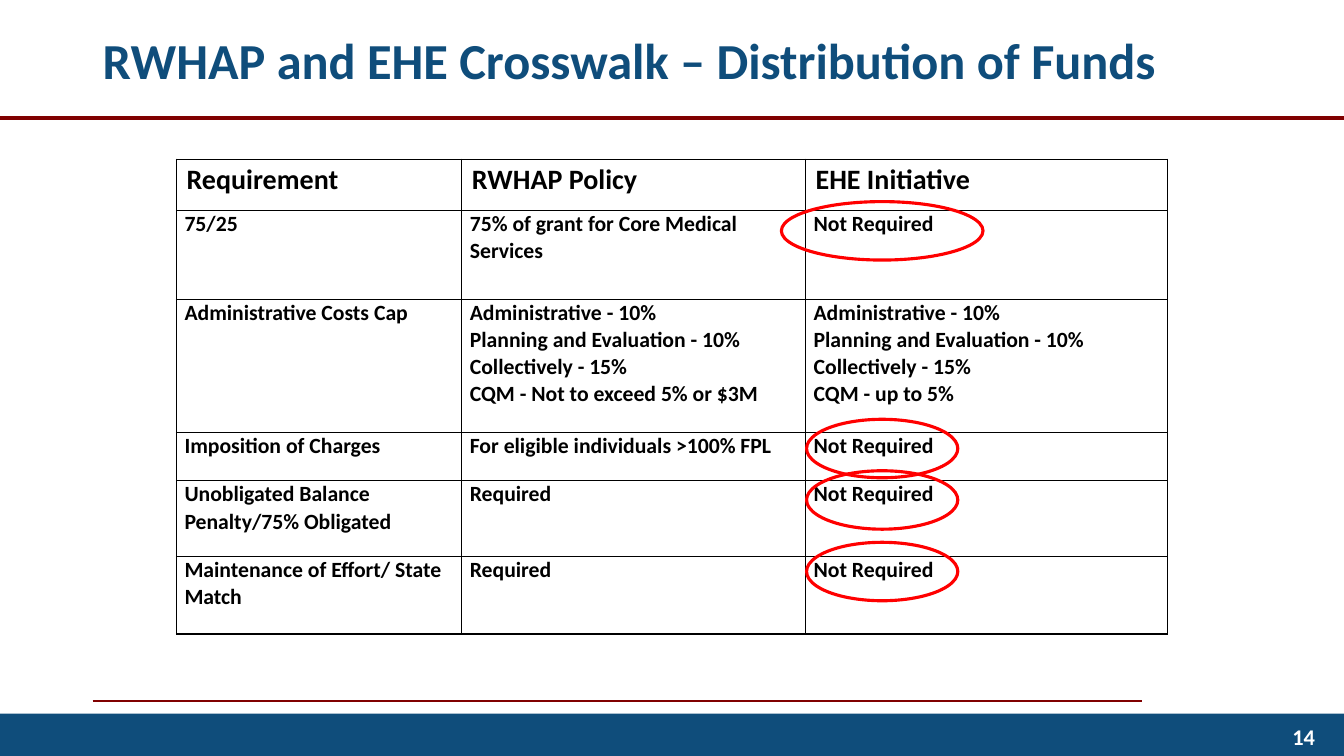
from lxml.etree import SubElement
from pptx import Presentation
from pptx.dml.color import RGBColor
from pptx.enum.shapes import MSO_CONNECTOR, MSO_SHAPE
from pptx.enum.text import MSO_ANCHOR, PP_ALIGN
from pptx.oxml.ns import qn
from pptx.util import Inches, Pt

SLIDE_WIDTH, SLIDE_HEIGHT = 13.33, 7.5
NAVY, MAROON, RED, BLACK, WHITE = "0F4D7B", "800000", "FF0000", "000000", "FFFFFF"

COLUMN_WIDTHS = [2.83, 3.41, 3.59]
ROW_HEIGHTS = [0.51, 0.88, 1.32, 0.48, 0.75, 0.77]
REQUIREMENTS = [
    ("Requirement", "RWHAP Policy", "EHE Initiative"),
    ("75/25", "75% of grant for Core Medical Services", "Not Required"),
    (
        "Administrative Costs Cap",
        "Administrative - 10%\nPlanning and Evaluation - 10%\n"
        "Collectively - 15%\nCQM - Not to exceed 5% or $3M",
        "Administrative - 10%\nPlanning and Evaluation - 10%\n"
        "Collectively - 15%\nCQM - up to 5%",
    ),
    ("Imposition of Charges", "For eligible individuals >100% FPL", "Not Required"),
    ("Unobligated Balance Penalty/75% Obligated", "Required", "Not Required"),
    ("Maintenance of Effort/ State Match", "Required", "Not Required"),
]
# Offsets and widths relative to the table's top left corner
NOT_REQUIRED_RINGS = [(6, 0.42, 2), (6.25, 3.09, 1.5), (6.25, 2.58, 1.5), (6.25, 3.8, 1.5)]
RING_HEIGHT = 0.58


def color(hex_code):
    return RGBColor.from_string(hex_code)


def format_text(text_frame, size, hex_code, align=PP_ALIGN.LEFT, line_spacing=1.0):
    for paragraph in text_frame.paragraphs:
        paragraph.alignment = align
        paragraph.line_spacing = line_spacing
        for run in paragraph.runs:
            run.font.name = "Calibri"
            run.font.size = Pt(size)
            run.font.bold = True
            run.font.color.rgb = color(hex_code)


def add_label(slide, left, top, width, height, text, size, hex_code, align=PP_ALIGN.LEFT):
    label = slide.shapes.add_textbox(Inches(left), Inches(top), Inches(width), Inches(height))
    frame = label.text_frame
    frame.word_wrap = True
    frame.vertical_anchor = MSO_ANCHOR.MIDDLE
    frame.text = text
    format_text(frame, size, hex_code, align)


def add_rule(slide, left, right, y, weight):
    rule = slide.shapes.add_connector(
        MSO_CONNECTOR.STRAIGHT, Inches(left), Inches(y), Inches(right), Inches(y)
    )
    rule.line.color.rgb = color(MAROON)
    rule.line.width = Pt(weight)
    SubElement(rule._element.spPr, qn("a:effectLst"))


def add_header(slide, left, top, width, height):
    add_rule(slide, left, left + width, top + height, 3)
    add_label(slide, left + 0.92, top, 11.5, height,
              "RWHAP and EHE Crosswalk – Distribution of Funds", 36, NAVY)


def add_footer(slide, left, top, width, height):
    add_rule(slide, left + 0.92, left + 11.33, top - 0.13, 1.5)
    band = slide.shapes.add_shape(
        MSO_SHAPE.RECTANGLE, Inches(left), Inches(top), Inches(width), Inches(height)
    )
    band.shadow.inherit = False
    band.fill.solid()
    band.fill.fore_color.rgb = color(NAVY)
    band.line.fill.background()
    add_label(slide, left + width - 3.19, top + 0.02, 3, height, "14", 16, WHITE, PP_ALIGN.RIGHT)


def add_borders(cell):
    properties = cell._tc.get_or_add_tcPr()
    for side in ("a:lnL", "a:lnR", "a:lnT", "a:lnB"):
        border = SubElement(properties, qn(side), w=str(Pt(1)))
        fill = SubElement(border, qn("a:solidFill"))
        SubElement(fill, qn("a:srgbClr"), val=BLACK)


def fill_cell(cell, text, is_heading):
    add_borders(cell)
    cell.fill.background()
    cell.margin_left = Inches(0.1 if is_heading else 0.08)
    cell.margin_top = Inches(0.04 if is_heading else 0)
    cell.margin_right = cell.margin_bottom = 0
    cell.text_frame.text = text
    if is_heading:
        format_text(cell.text_frame, 20, BLACK)
    else:
        format_text(cell.text_frame, 15.5, BLACK, line_spacing=1.02)


def add_crosswalk(slide, left, top):
    """Add the requirements table and the rings around what EHE does not require."""
    crosswalk = slide.shapes.add_table(
        len(ROW_HEIGHTS), len(COLUMN_WIDTHS), Inches(left), Inches(top),
        Inches(sum(COLUMN_WIDTHS)), Inches(sum(ROW_HEIGHTS)),
    ).table
    crosswalk.first_row = crosswalk.horz_banding = False
    for column, width in zip(crosswalk.columns, COLUMN_WIDTHS):
        column.width = Inches(width)
    for row_index, (row, height) in enumerate(zip(crosswalk.rows, ROW_HEIGHTS)):
        row.height = Inches(height)
        for cell, text in zip(row.cells, REQUIREMENTS[row_index]):
            fill_cell(cell, text, is_heading=row_index == 0)

    for x, y, width in NOT_REQUIRED_RINGS:
        ring = slide.shapes.add_shape(
            MSO_SHAPE.OVAL, Inches(left + x), Inches(top + y), Inches(width), Inches(RING_HEIGHT)
        )
        ring.shadow.inherit = False
        ring.fill.background()
        ring.line.color.rgb = color(RED)
        ring.line.width = Pt(2.25)


def main():
    presentation = Presentation()
    presentation.slide_width = Inches(SLIDE_WIDTH)
    presentation.slide_height = Inches(SLIDE_HEIGHT)
    slide = presentation.slides.add_slide(presentation.slide_layouts[6])
    add_footer(slide, 0, 7.08, SLIDE_WIDTH, 0.42)
    add_header(slide, 0, 0, SLIDE_WIDTH, 1.17)
    add_crosswalk(slide, 1.75, 1.58)
    presentation.save("out.pptx")


if __name__ == "__main__":
    main()
